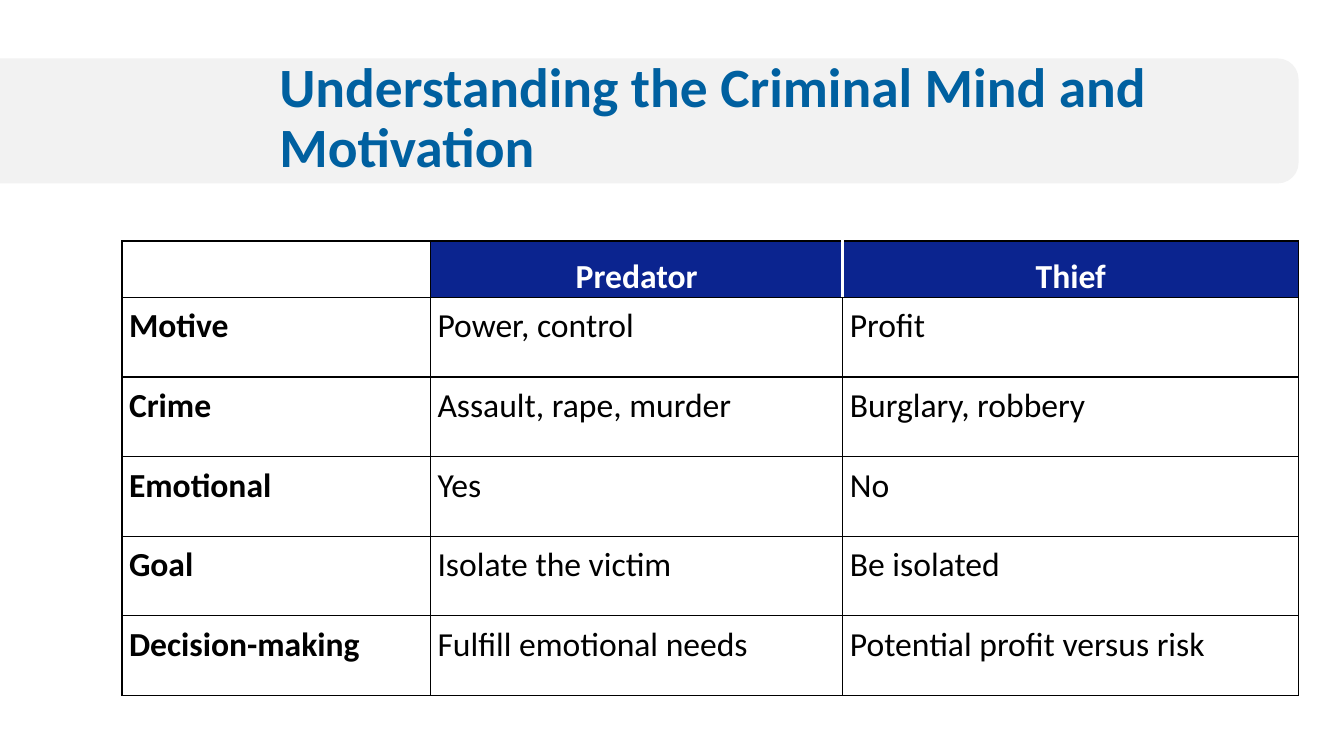
from lxml import etree
from pptx import Presentation
from pptx import util as u
from pptx.dml.color import RGBColor
from pptx.enum import shapes, text
from pptx.oxml.ns import qn

PX = 9144  # 100 px to the inch
COLOURS = {"band": "F2F2F2", "title": "0060A0", "header": "0B248F",
           "white": "FFFFFF", "black": "000000"}
HEADERS = ["", "Predator", "Thief"]
ROWS = [
    ["Motive", "Power, control", "Profit"],
    ["Crime", "Assault, rape, murder", "Burglary, robbery"],
    ["Emotional", "Yes", "No"],
    ["Goal", "Isolate the victim", "Be isolated"],
    ["Decision-making", "Fulfill emotional needs", "Potential profit versus risk"],
]


def colour(name):
    return RGBColor.from_string(COLOURS[name])


def write(frame, words, size=24, ink="black", bold=False,
          align=text.PP_ALIGN.LEFT, spacing=u.Pt(14)):
    para = frame.paragraphs[0]
    para.alignment = align
    para.line_spacing = spacing
    span = para.add_run()
    span.text = words
    span.font.name = "Calibri"
    span.font.size = u.Pt(size)
    span.font.bold = bold
    span.font.color.rgb = colour(ink)


def add_border(cell, side, ink="black", width=1):
    """Cell borders must come before the fill in the cell properties."""
    line = etree.Element(qn(f"a:ln{side}"), w=str(u.Pt(width)))
    solid = etree.SubElement(line, qn("a:solidFill"))
    etree.SubElement(solid, qn("a:srgbClr"), val=COLOURS[ink])
    properties = cell._tc.get_or_add_tcPr()
    properties.insert(len(properties.findall("*")) - 1, line)


class SlideBuilder:
    def __init__(self, deck):
        self.page = deck.slides.add_slide(deck.slide_layouts[5])

    def title(self, words, left, top, width, height):
        box = self.page.shapes.title
        box.left, box.top, box.width, box.height = (
            n * PX for n in (left, top, width, height))
        frame = box.text_frame
        frame.word_wrap = True
        frame.auto_size = text.MSO_AUTO_SIZE.NONE
        frame.vertical_anchor = text.MSO_ANCHOR.MIDDLE
        write(frame, words, size=39.6, ink="title", bold=True, spacing=0.9)

    def band(self, left, top, width, height):
        band = self.page.shapes.add_shape(
            shapes.MSO_SHAPE.ROUNDED_RECTANGLE,
            *(n * PX for n in (left, top, width, height)))
        band.shadow.inherit = False
        band.fill.solid()
        band.fill.fore_color.rgb = colour("band")
        band.line.fill.background()
        # The band lies behind the title
        self.page.shapes.title._element.addprevious(band._element)

    def table(self, left, top, widths, heights, rows):
        table = self.page.shapes.add_table(
            len(rows), len(widths), left * PX, top * PX,
            sum(widths) * PX, sum(heights) * PX).table
        table.first_row = table.horz_banding = False
        for column, width in zip(table.columns, widths):
            column.width = width * PX
        for row, height in zip(table.rows, heights):
            row.height = height * PX
        for r, row in enumerate(rows):
            for c, words in enumerate(row):
                self.cell(table.cell(r, c), words, r, c)

    def cell(self, cell, words, r, c):
        header = r == 0 and c > 0
        cell.margin_left = cell.margin_right = 7 * PX
        cell.margin_top = cell.margin_bottom = 0
        cell.vertical_anchor = (text.MSO_ANCHOR.BOTTOM if header
                                else text.MSO_ANCHOR.MIDDLE)
        cell.fill.solid()
        cell.fill.fore_color.rgb = colour("header" if header else "white")
        # A thick white line parts the two header cells
        divider = {(0, 1): "R", (0, 2): "L"}.get((r, c))
        for side in "LRTB":
            if side == divider:
                add_border(cell, side, "white", 2.25)
            else:
                add_border(cell, side)
        if header:
            write(cell.text_frame, words, ink="white", bold=True,
                  align=text.PP_ALIGN.CENTER)
        elif words:
            write(cell.text_frame, words, bold=c == 0)


def main():
    deck = Presentation()
    deck.slide_width, deck.slide_height = 1333 * PX, 750 * PX
    builder = SlideBuilder(deck)

    # Heading
    builder.title("Understanding the Criminal Mind and Motivation",
                  267, 58, 1021, 122)
    builder.band(-32, 58, 1320, 124)

    # Comparison table
    builder.table(121, 239, [306, 409, 452], [56] + [79] * len(ROWS),
                  [HEADERS] + ROWS)
    deck.save("out.pptx")


if __name__ == "__main__":
    main()
